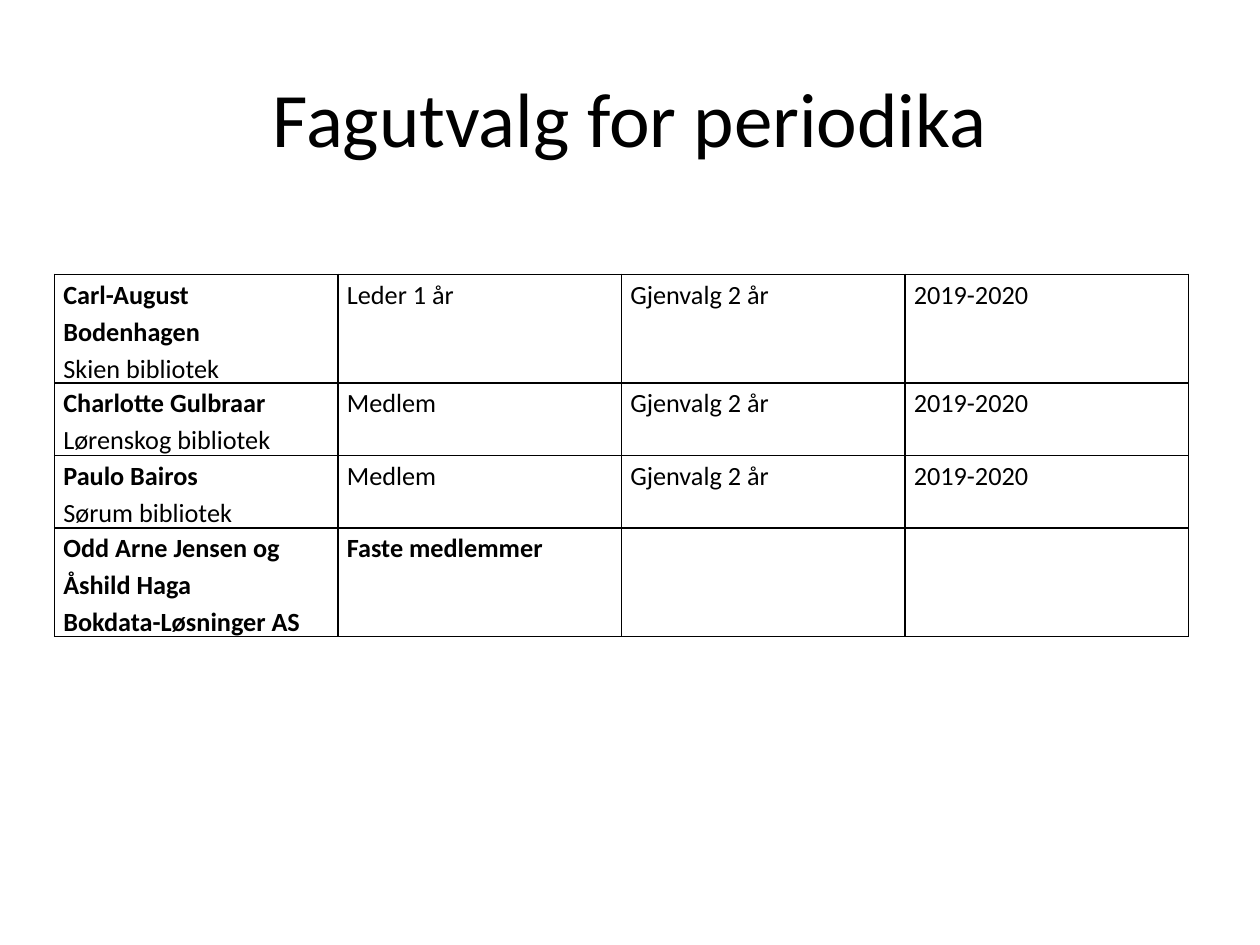
import pptx
import pptx.util
import pptx.dml.color
import pptx.enum.text
import pptx.oxml
import pptx.oxml.ns

Pt = pptx.util.Pt
COLORS = {"text": "000000", "border": "000000"}
TITLE_FONT = {"name": "Calibri", "size": Pt(44), "bold": False}
CELL_FONT = {"name": "Calibri", "size": Pt(15)}
CELL_FORMAT = {"margin_left": Pt(5), "margin_right": Pt(5),
               "margin_top": Pt(0), "margin_bottom": Pt(0)}
COL_WIDTH = 162
ROW_HEIGHTS = [40.3, 40.3, 40.3, 60.5]
MEMBERS = [
    (["Carl-August Bodenhagen"], ["Skien bibliotek"], "Leder 1 år"),
    (["Charlotte Gulbraar"], ["Lørenskog bibliotek"], "Medlem"),
    (["Paulo Bairos"], ["Sørum bibliotek"], "Medlem"),
]
PERMANENT = ["Odd Arne Jensen og", "Åshild Haga", "Bokdata-Løsninger AS"]


def set_format(obj, values):
    for key, value in values.items():
        setattr(obj, key, value)


def add_run(p, text, font):
    r = p.add_run()
    r.text = text
    set_format(r.font, font)
    r.font.color.rgb = pptx.dml.color.RGBColor.from_string(COLORS["text"])


def add_title(s, text):
    sp = s.shapes.add_textbox(Pt(36), Pt(21.6), Pt(648), Pt(90))
    tf = sp.text_frame
    set_format(tf, {"word_wrap": True,
                    "vertical_anchor": pptx.enum.text.MSO_ANCHOR.MIDDLE})
    p = tf.paragraphs[0]
    p.alignment = pptx.enum.text.PP_ALIGN.CENTER
    add_run(p, text, TITLE_FONT)


def set_borders(cell):
    tcPr = cell._tc.get_or_add_tcPr()
    ns = pptx.oxml.ns.nsdecls("a")
    for i, side in enumerate(("lnL", "lnR", "lnT", "lnB")):
        tcPr.insert(i, pptx.oxml.parse_xml(
            f'<a:{side} {ns} w="{Pt(1)}"><a:solidFill>'
            f'<a:srgbClr val="{COLORS["border"]}"/></a:solidFill></a:{side}>'))


def fill_cell(cell, lines):
    set_format(cell, CELL_FORMAT)
    cell.fill.background()
    set_borders(cell)
    p = cell.text_frame.paragraphs[0]
    p.line_spacing = 1.15
    for i, (text, bold) in enumerate(lines):
        if i:
            p.add_line_break()
        add_run(p, text, {**CELL_FONT, "bold": bold})


def add_member_table(s, rows):
    width, height = COL_WIDTH * len(rows[0]), sum(ROW_HEIGHTS)
    table = s.shapes.add_table(len(rows), len(rows[0]), Pt(31.2), Pt(156.8),
                               Pt(width), Pt(height)).table
    set_format(table, {"first_row": False, "horz_banding": False})
    for col in table.columns:
        col.width = Pt(COL_WIDTH)
    for i, row in enumerate(rows):
        table.rows[i].height = Pt(ROW_HEIGHTS[i])
        for j, lines in enumerate(row):
            fill_cell(table.cell(i, j), lines)


def styled(lines, bold):
    return [(line, bold) for line in lines]


def main():
    prs = pptx.Presentation()
    set_format(prs, {"slide_width": Pt(720), "slide_height": Pt(540)})
    s = prs.slides.add_slide(prs.slide_layouts[6])
    add_title(s, "Fagutvalg for periodika")
    rows = [[styled(names, True) + styled(library, False)]
            + [styled([text], False)
               for text in (role, "Gjenvalg 2 år", "2019-2020")]
            for names, library, role in MEMBERS]
    rows.append([styled(PERMANENT, True), styled(["Faste medlemmer"], True), [], []])
    add_member_table(s, rows)
    prs.save("out.pptx")


if __name__ == "__main__":
    main()
